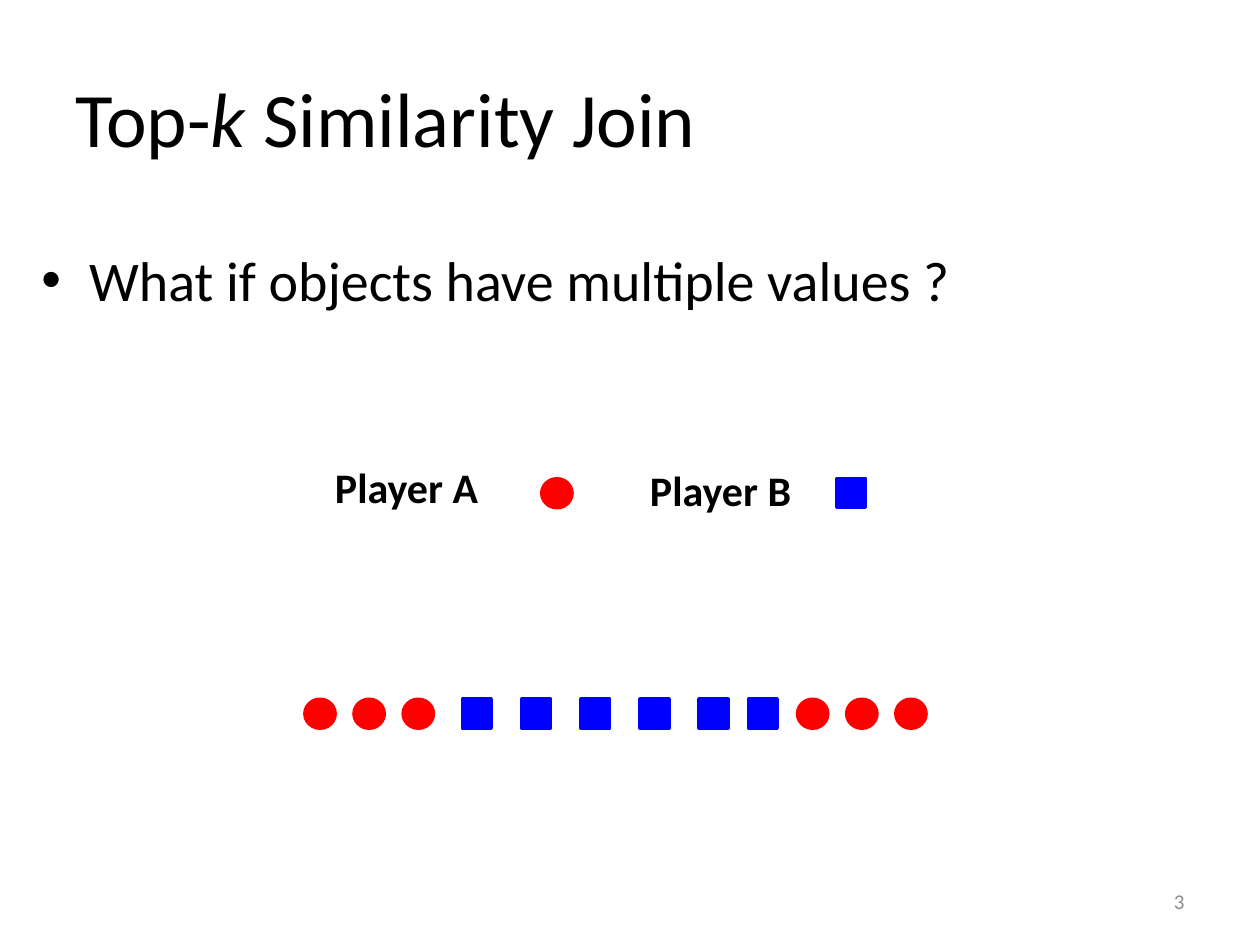
from lxml.etree import SubElement
from pptx import Presentation
from pptx.dml.color import RGBColor
from pptx.enum.shapes import MSO_SHAPE
from pptx.enum.text import MSO_ANCHOR, MSO_AUTO_SIZE, PP_ALIGN
from pptx.oxml.ns import qn
from pptx.util import Inches, Pt

RED, BLUE, BLACK, GRAY = "FF0000", "0000FF", "000000", "8C8C8C"
PLAYER_A = (MSO_SHAPE.OVAL, 0.24, RED)
PLAYER_B = (MSO_SHAPE.RECTANGLE, 0.23, BLUE)
MARK_HEIGHT = 0.23
LEGEND_TOP, ROW_TOP = 3.8, 5.55
A_STEP, B_STEP = 0.39, 0.47


def rgb(value):
    return RGBColor.from_string(value)


def set_attrs(obj, values):
    for name, value in values.items():
        setattr(obj, name, value)


def add_text(s, box, runs, size, color=BLACK, frame=None, para=None):
    sp = s.shapes.add_textbox(*map(Inches, box))
    tf = sp.text_frame
    set_attrs(tf, {"word_wrap": True, **(frame or {})})
    p = tf.paragraphs[0]
    set_attrs(p, para or {})
    for text, style in runs:
        r = p.add_run()
        r.text = text
        set_attrs(r.font, {"name": "Calibri", "size": Pt(size), **style})
        r.font.color.rgb = rgb(color)
    return p


def add_bullet(p, indent):
    pPr = p._p.get_or_add_pPr()
    pPr.set("marL", str(Inches(indent)))
    pPr.set("indent", str(-Inches(indent)))
    SubElement(pPr, qn("a:buFont")).set("typeface", "Arial")
    SubElement(pPr, qn("a:buChar")).set("char", "•")


def add_mark(s, player, left, top):
    kind, width, color = player
    sp = s.shapes.add_shape(kind, *map(Inches, (left, top, width, MARK_HEIGHT)))
    sp.shadow.inherit = False
    sp.fill.solid()
    sp.fill.fore_color.rgb = rgb(color)
    sp.line.color.rgb = rgb(color)
    sp.line.width = Pt(2)


def add_row(s, player, left, step, count):
    for i in range(count):
        add_mark(s, player, left + i * step, ROW_TOP)


def add_legend(s, label, left, top, player, mark_left):
    frame = {"word_wrap": False, "auto_size": MSO_AUTO_SIZE.SHAPE_TO_FIT_TEXT}
    add_text(s, (left, top, 1.35, 0.5), [(label, {"bold": True})], 24, frame=frame)
    add_mark(s, player, mark_left, LEGEND_TOP)


def main():
    prs = Presentation()
    prs.slide_width, prs.slide_height = Inches(10), Inches(7.5)
    s = prs.slides.add_slide(prs.slide_layouts[6])
    middle = {"vertical_anchor": MSO_ANCHOR.MIDDLE}

    title = [("Top-", {}), ("k", {"italic": True}), (" Similarity Join", {})]
    add_text(s, (0.5, 0.3, 9, 1.25), title, 44, frame=middle)
    add_text(s, (7.17, 6.95, 2.33, 0.4), [("3", {})], 12, GRAY, middle,
             {"alignment": PP_ALIGN.RIGHT})
    question = add_text(s, (0.23, 1.9, 9, 0.91),
                        [("What if objects have multiple values ?", {})], 32,
                        para={"space_before": Pt(6.4)})
    add_bullet(question, 0.38)

    add_legend(s, "Player A", 2.56, 3.61, PLAYER_A, 4.3)
    add_legend(s, "Player B", 5.06, 3.64, PLAYER_B, 6.64)

    add_row(s, PLAYER_A, 2.42, A_STEP, 3)
    add_row(s, PLAYER_B, 3.67, B_STEP, 5)
    add_row(s, PLAYER_B, 5.94, B_STEP, 1)
    add_row(s, PLAYER_A, 6.33, A_STEP, 3)

    prs.save("out.pptx")


if __name__ == "__main__":
    main()
